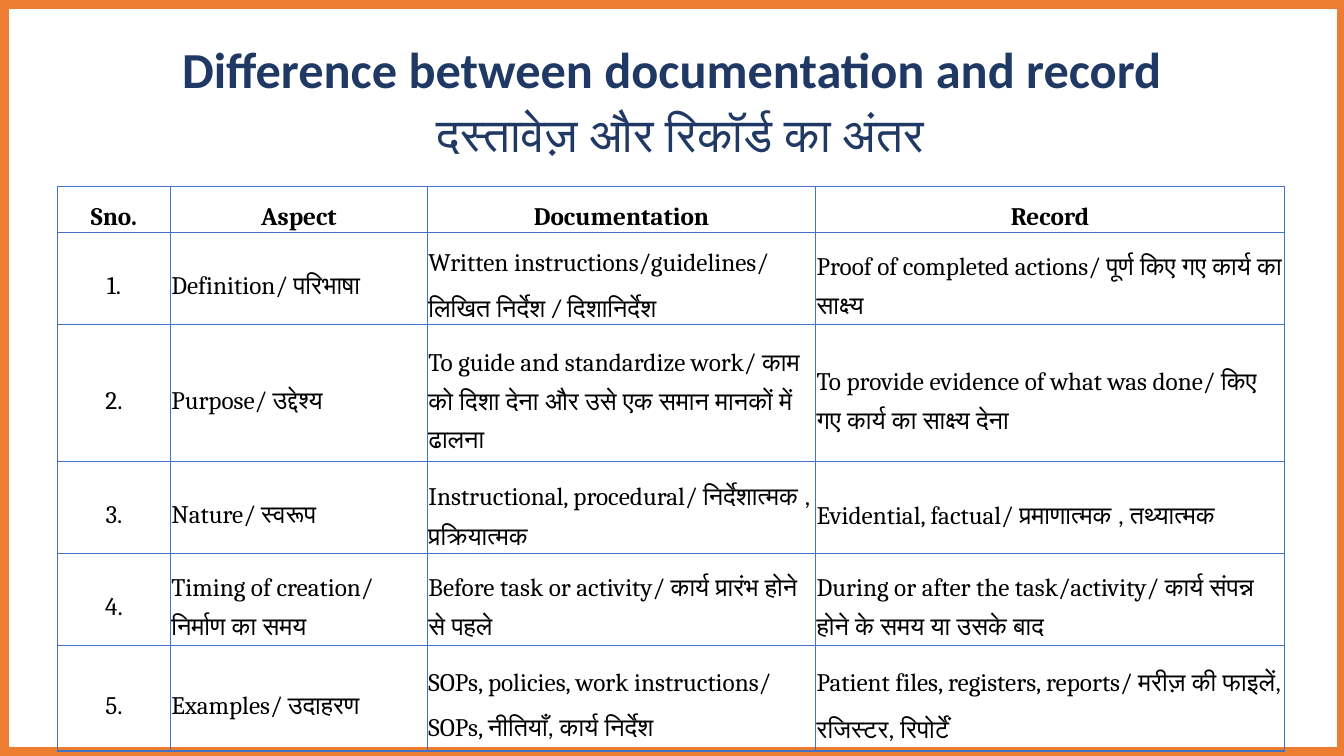
from dataclasses import dataclass

from lxml import etree
from pptx import Presentation
from pptx.dml.color import RGBColor
from pptx.enum.shapes import MSO_SHAPE
from pptx.enum.text import MSO_ANCHOR, PP_ALIGN
from pptx.oxml.ns import qn
from pptx.util import Inches, Pt

FRAME = MSO_SHAPE.FRAME
MIDDLE = MSO_ANCHOR.MIDDLE
CENTER = PP_ALIGN.CENTER
LEFT = PP_ALIGN.LEFT


@dataclass(frozen=True)
class Theme:
    frame: str = "ED7D31"
    title: str = "203864"
    ink: str = "000000"
    border: str = "4472C4"
    latin: str = "Cambria"
    hindi: str = "Calibri"
    title_size: int = 36
    gap_size: int = 44
    subtitle_size: int = 34
    cell_size: int = 18


theme = Theme()


def add_span(para, text, font, size, color, bold=False):
    span = para.add_run()
    span.text = text
    span.font.name = font
    span.font.size = Pt(size)
    span.font.bold = bold
    span.font.color.rgb = RGBColor.from_string(color)


def add_borders(cell):
    properties = cell._tc.get_or_add_tcPr()
    for position, side in enumerate(("a:lnL", "a:lnR", "a:lnT", "a:lnB")):
        line = etree.Element(qn(side), w=str(Pt(1)))
        fill = etree.SubElement(line, qn("a:solidFill"))
        etree.SubElement(fill, qn("a:srgbClr"), val=theme.border)
        properties.insert(position, line)


deck = Presentation()
deck.slide_width = Inches(13.33)
deck.slide_height = Inches(7.5)
page = deck.slides.add_slide(deck.slide_layouts[6])

frame = page.shapes.add_shape(FRAME, 0, 0, Inches(13.35), Inches(7.5))
frame.adjustments[0] = 0.08 / 7.5
frame.shadow.inherit = False
frame.fill.solid()
frame.fill.fore_color.rgb = RGBColor.from_string(theme.frame)
frame.line.color.rgb = RGBColor.from_string(theme.frame)
frame.line.width = Pt(1)

title_box = page.shapes.add_textbox(Inches(0.75), Inches(0.4), Inches(11.83), Inches(1.32))
title_box.text_frame.word_wrap = True
title = title_box.text_frame.paragraphs[0]
subtitle = title_box.text_frame.add_paragraph()
for para in (title, subtitle):
    para.alignment = CENTER
    para.line_spacing = 0.9
add_span(title, "Difference between documentation and record",
         theme.hindi, theme.title_size, theme.title, True)
add_span(subtitle, " ", theme.hindi, theme.gap_size, theme.title, True)
add_span(subtitle, "दस्तावेज़ और रिकॉर्ड का अंतर", theme.hindi, theme.subtitle_size, theme.title)

headings = ["Sno.", "Aspect", "Documentation", "Record"]
aspects = [
    [("Definition/ ", "परिभाषा"),
     ("Written instructions/guidelines/ ", "लिखित निर्देश / दिशानिर्देश"),
     ("Proof of completed actions/ ", "पूर्ण किए गए कार्य का साक्ष्य")],
    [("Purpose/ ", "उद्देश्य"),
     ("To guide and standardize work/ ", "काम को दिशा देना और उसे एक समान मानकों में ढालना"),
     ("To provide evidence of what was done/ ", "किए गए कार्य का साक्ष्य देना")],
    [("Nature/ ", "स्वरूप "),
     ("Instructional, procedural/ ", "निर्देशात्मक , प्रक्रियात्मक "),
     ("Evidential, factual/ ", "प्रमाणात्मक , तथ्यात्मक ")],
    [("Timing of creation/ ", "निर्माण का समय"),
     ("Before task or activity/ ", "कार्य प्रारंभ होने से पहले"),
     ("During or after the task/activity/ ", "कार्य संपन्न होने के समय या उसके बाद")],
    [("Examples/ ", "उदाहरण"),
     ("SOPs, policies, work instructions/ SOPs, ", "नीतियाँ, कार्य निर्देश"),
     ("Patient files, registers, reports/ ", "मरीज़ की फाइलें, रजिस्टर, रिपोर्टें")],
]
rows = [[(heading,) for heading in headings]]
rows += [[(f"{number}.",), *aspect] for number, aspect in enumerate(aspects, 1)]
column_widths = [1.12, 2.55, 3.85, 4.65]
row_heights = [0.43, 0.84, 0.99, 0.84, 0.84, 1.05]

table = page.shapes.add_table(
    len(rows), len(headings), Inches(0.57), Inches(1.85),
    Inches(sum(column_widths)), Inches(sum(row_heights))).table
table.first_row = False
table.horz_banding = False
for column, width in zip(table.columns, column_widths):
    column.width = Inches(width)
for row, height in zip(table.rows, row_heights):
    row.height = Inches(height)

for row_index, row in enumerate(rows):
    for column_index, texts in enumerate(row):
        cell = table.cell(row_index, column_index)
        cell.fill.background()
        add_borders(cell)
        cell.vertical_anchor = MIDDLE
        cell.margin_left = cell.margin_right = cell.margin_top = Inches(0.01)
        cell.margin_bottom = 0
        para = cell.text_frame.paragraphs[0]
        para.alignment = CENTER if len(texts) == 1 else LEFT
        para.line_spacing = 1.5
        for text, font in zip(texts, (theme.latin, theme.hindi)):
            add_span(para, text, font, theme.cell_size, theme.ink, row_index == 0)

deck.save("out.pptx")
